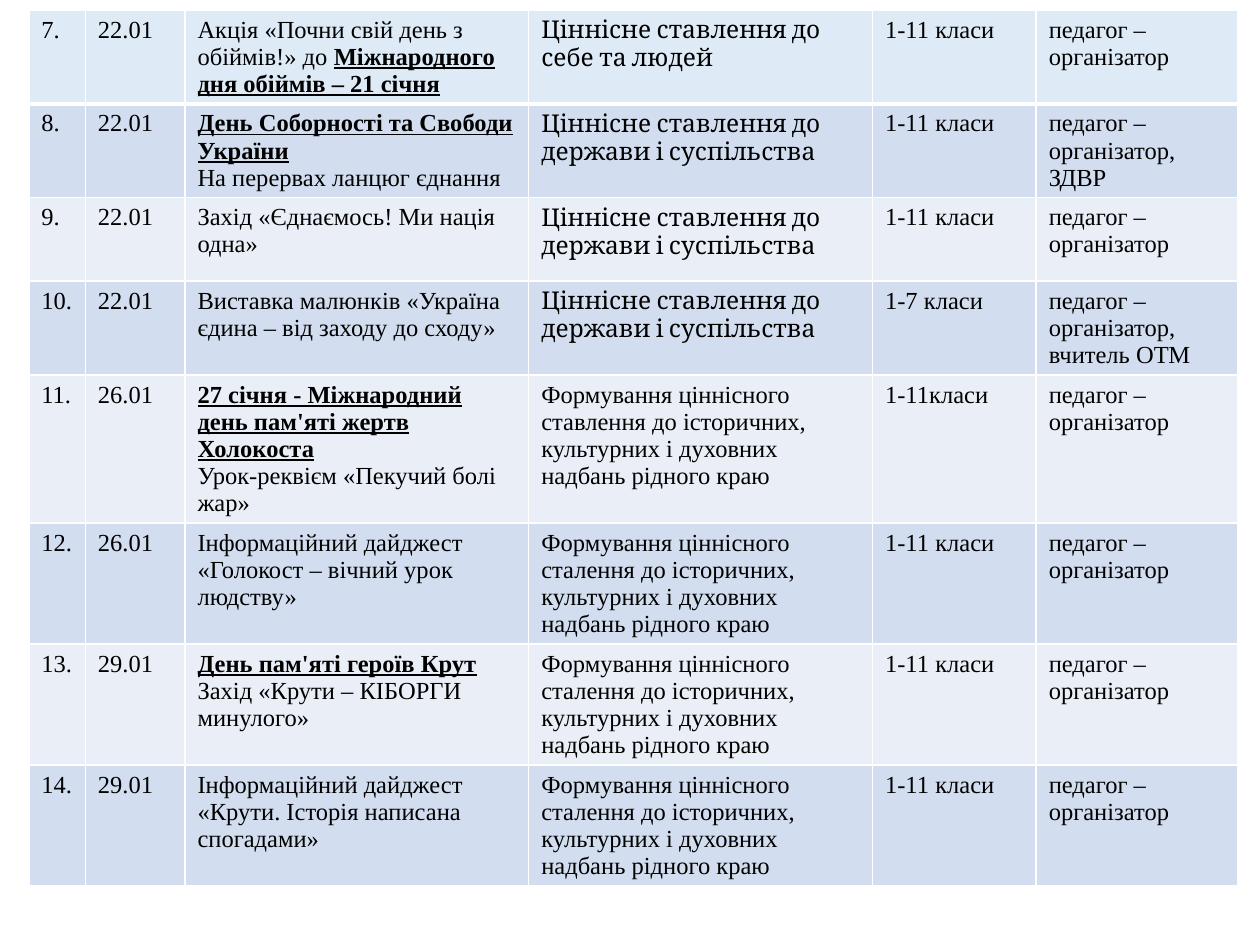
from lxml import etree
from pptx import Presentation
from pptx.dml.color import RGBColor
from pptx.oxml.ns import qn
from pptx.util import Cm, Pt

THEME = {
    "body": "Times New Roman", "value": "Cambria", "size": 14, "text": "000000",
    "first": "DEEBF7", "bands": ("EAEFF7", "D2DEEF"),
    "line": "FFFFFF", "thin": 1, "thick": 3,
}

# Content: a line feed starts a paragraph, asterisks enclose key dates
STATE = "Ціннісне ставлення до держави і суспільства"
LAND = ("Формування ціннісного {} до історичних,\n"
        "культурних і духовних надбань рідного краю")
HERITAGE = LAND.format("сталення")
ALL = "1-11 класи"
LEAD = "педагог –організатор"

PLAN = [
    ("7.", "22.01",
     "Акція «Почни свій день з обіймів!» до *Міжнародного дня обіймів – 21 січня*",
     "Ціннісне ставлення до себе та людей", ALL, LEAD),
    ("8.", "22.01",
     "*День Соборності тa Свободи України*\nНа перервах ланцюг єднання",
     STATE, ALL, LEAD + ", ЗДВР"),
    ("9.", "22.01", "Захід «Єднаємось! Ми нація одна»", STATE, ALL, LEAD),
    ("10.", "22.01", "Виставка малюнків «Україна єдина – від заходу до сходу»",
     STATE, "1-7 класи", LEAD + ", вчитель ОТМ"),
    ("11.", "26.01",
     "*27 січня - Міжнародний день пам'яті жертв Холокоста*\n"
     "Урок-реквієм «Пекучий болі жар»",
     LAND.format("ставлення"), "1-11класи", LEAD),
    ("12.", "26.01", "Інформаційний дайджест «Голокост – вічний урок людству»",
     HERITAGE, ALL, LEAD),
    ("13.", "29.01",
     "*День пам'яті героїв Крут*\nЗахід «Крути – КІБОРГИ минулого»",
     HERITAGE, ALL, LEAD),
    ("14.", "29.01", "Інформаційний дайджест «Крути. Історія написана спогадами»",
     HERITAGE, ALL, LEAD),
]
WIDTHS = (1.14, 2.01, 6.93, 6.93, 3.3, 4.06)
HEIGHTS = (1.47, 1.47, 1.68) + (1.22,) * 5  # least heights; rows grow with text
LEFT, TOP, HEIGHT = 0.58, 0.2, 18.85
VALUE_COL = 3


def add_text(cell, text, font):
    frame = cell.text_frame
    for i, line in enumerate(text.split("\n")):
        para = frame.add_paragraph() if i else frame.paragraphs[0]
        for j, part in enumerate(line.split("*")):
            if not part:
                continue
            run = para.add_run()
            run.text = part
            run.font.name = font
            run.font.size = Pt(THEME["size"])
            run.font.bold = run.font.underline = j % 2 == 1
            run.font.color.rgb = RGBColor.from_string(THEME["text"])


def add_lines(cell, row):
    props = cell._tc.get_or_add_tcPr()
    thick = {0: "lnB", 1: "lnT"}.get(row)
    for side in ("lnL", "lnR", "lnT", "lnB"):
        width = THEME["thick" if side == thick else "thin"]
        line = etree.SubElement(props, qn("a:" + side), w=str(Pt(width)))
        fill = etree.SubElement(line, qn("a:solidFill"))
        etree.SubElement(fill, qn("a:srgbClr"), val=THEME["line"])


def add_plan(slide):
    frame = slide.shapes.add_table(len(PLAN), len(WIDTHS), Cm(LEFT), Cm(TOP),
                                   Cm(sum(WIDTHS)), Cm(HEIGHT))
    table = frame.table
    table.first_row = table.horz_banding = False
    for col, width in zip(table.columns, WIDTHS):
        col.width = Cm(width)
    for row, height in zip(table.rows, HEIGHTS):
        row.height = Cm(height)
    frame.height = Cm(HEIGHT)

    # Cells: text, borders, then banded fill
    for r, entry in enumerate(PLAN):
        color = THEME["bands"][r % 2] if r else THEME["first"]
        for c, text in enumerate(entry):
            cell = table.cell(r, c)
            value = c == VALUE_COL and "\n" not in text
            add_text(cell, text, THEME["value" if value else "body"])
            add_lines(cell, r)
            cell.fill.solid()
            cell.fill.fore_color.rgb = RGBColor.from_string(color)


def main():
    deck = Presentation()
    deck.slide_width, deck.slide_height = Cm(25.4), Cm(19.05)
    add_plan(deck.slides.add_slide(deck.slide_layouts[6]))
    deck.save("out.pptx")


if __name__ == "__main__":
    main()
